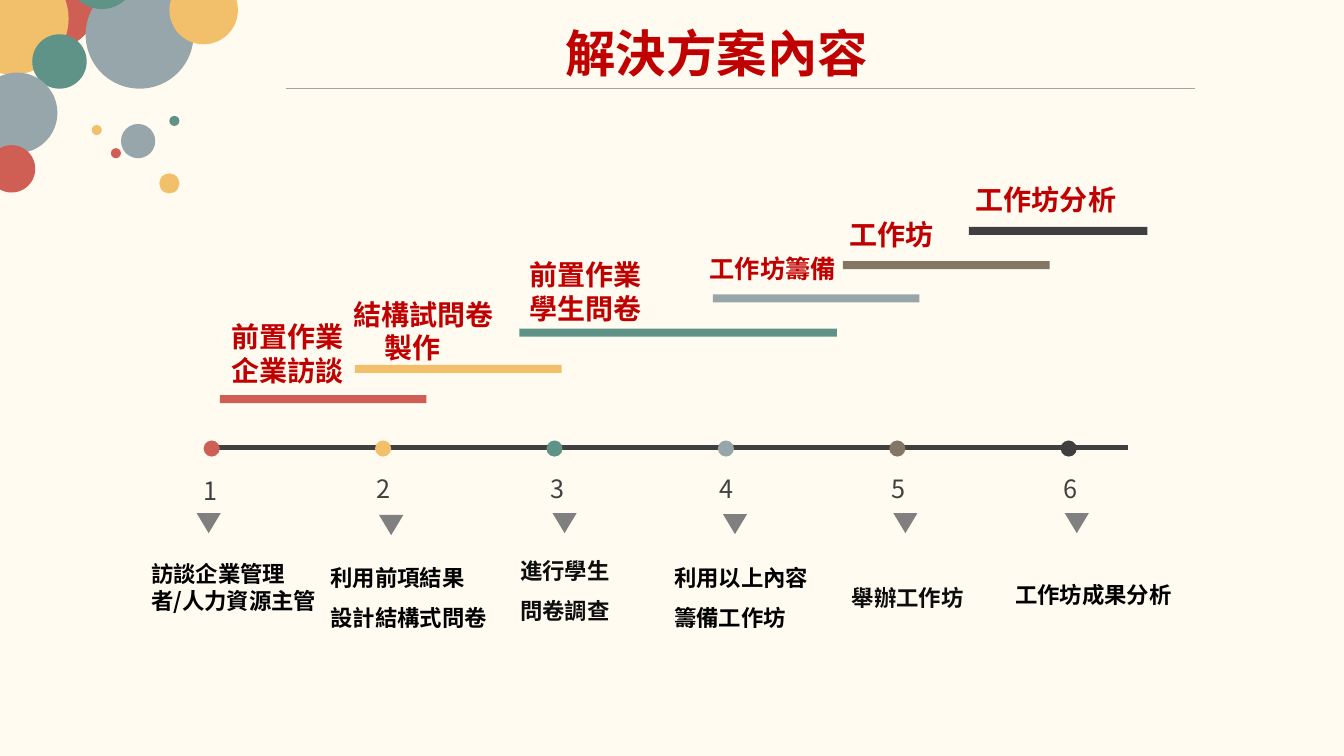
from lxml import etree
from pptx import Presentation
from pptx import util as u
from pptx.dml.color import RGBColor
from pptx.enum import shapes, text
from pptx.oxml.ns import qn

CREAM = RGBColor(0xFF, 0xFB, 0xF0)
RED = RGBColor(0xCF, 0x5F, 0x55)
GOLD = RGBColor(0xF2, 0xC0, 0x6B)
GREEN = RGBColor(0x5F, 0x93, 0x87)
STEEL = RGBColor(0x97, 0xA6, 0xAB)
BROWN = RGBColor(0x83, 0x76, 0x64)
DARK = RGBColor(0x3F, 0x3F, 0x3F)
CRIMSON = RGBColor(0xC0, 0x00, 0x00)
BLACK = RGBColor(0x00, 0x00, 0x00)
INK = RGBColor(0x0D, 0x0D, 0x0D)
SLATE = RGBColor(0x40, 0x40, 0x40)
GREY = RGBColor(0x80, 0x80, 0x80)
PALE = RGBColor(0xA6, 0xA6, 0xA6)

KIND = shapes.MSO_SHAPE
LEFT, CENTER = text.PP_ALIGN.LEFT, text.PP_ALIGN.CENTER


class Board:
    """Holds the type style and the slide being drawn."""

    font = "Noto Sans CJK SC"

    def __init__(self, slide):
        self.slide = slide
        fill = slide.background.fill
        fill.solid()
        fill.fore_color.rgb = CREAM

    def shape(self, kind, x, y, w, h, color, group=None):
        home = (group or self.slide).shapes
        item = home.add_shape(kind, *map(u.Inches, (x, y, w, h)))
        item.shadow.inherit = False
        item.fill.solid()
        item.fill.fore_color.rgb = color
        item.line.fill.background()
        return item

    def arrow(self, x, y):
        item = self.shape(KIND.ISOSCELES_TRIANGLE, x, y, 0.24, 0.2, GREY)
        item._element.spPr.find(qn("a:xfrm")).set("flipV", "1")

    def line(self, x1, x2, y, color, width):
        item = self.slide.shapes.add_connector(
            shapes.MSO_CONNECTOR.STRAIGHT, *map(u.Inches, (x1, y, x2, y)))
        item.line.color.rgb = color
        item.line.width = u.Pt(width)
        etree.SubElement(item._element.spPr, qn("a:effectLst"))

    def label(self, words, x, y, w, h, size, color, bold=True,
              align=LEFT, space=None, indents=()):
        box = self.slide.shapes.add_textbox(*map(u.Inches, (x, y, w, h)))
        frame = box.text_frame
        frame.word_wrap = True
        frame.auto_size = text.MSO_AUTO_SIZE.SHAPE_TO_FIT_TEXT
        frame.text = words
        for para in frame.paragraphs:
            para.alignment = align
            if space:
                para.line_spacing = space
            font = para.font
            font.size, font.bold = u.Pt(size), bold
            font.color.rgb = color
            font.name = self.font
            props = para._p.pPr
            etree.SubElement(props.find(qn("a:defRPr")), qn("a:ea"),
                             typeface=self.font)
        for para, gap in zip(frame.paragraphs, indents):
            para._p.pPr.set("marL", str(u.Inches(gap)))


def main():
    deck = Presentation()
    deck.slide_width, deck.slide_height = u.Inches(13.33), u.Inches(7.5)
    board = Board(deck.slides.add_slide(deck.slide_layouts[6]))

    # Phase bars: left, top, width, colour
    bars = [
        (2.18, 3.92, 2.05, RED),
        (3.52, 3.62, 2.05, GOLD),
        (5.15, 3.26, 3.15, GREEN),
        (7.07, 2.92, 2.05, STEEL),
        (8.36, 2.59, 2.05, BROWN),
        (9.61, 2.25, 1.77, DARK),
    ]
    for x, y, w, color in bars:
        board.shape(KIND.RECTANGLE, x, y, w, 0.08, color)

    # Timeline with its evenly spaced dots
    board.line(2.14, 11.19, 4.44, SLATE, 3)
    for i, bar in enumerate(bars):
        board.shape(KIND.OVAL, 2.02 + 1.7 * i, 4.37, 0.16, 0.16, bar[-1])

    # Step numbers and the arrows below them
    board.label("1", 1.91, 4.67, 0.35, 0.4, 18, SLATE, False, CENTER)
    for num, x in enumerate((3.42, 5.14, 6.82, 8.52, 10.23), 2):
        board.label(str(num), x, 4.65, 0.65, 0.4, 18, SLATE, False,
                    indents=[0.22])
    for x, y in ((1.95, 5.09), (3.76, 5.11), (5.48, 5.09),
                 (7.17, 5.1), (8.86, 5.09), (10.56, 5.09)):
        board.arrow(x, y)

    # Step details
    board.label("訪談企業管理者/人力資源主管", 1.4, 5.51, 1.92, 0.64, 16, BLACK)
    for words, x, y, w, h, color in (
        ("利用前項結果\n設計結構式問卷", 3.18, 5.41, 1.79, 0.91, BLACK),
        ("進行學生\n問卷調查", 5.06, 5.34, 1.37, 0.86, INK),
        ("利用以上內容\n籌備工作坊", 6.59, 5.41, 1.57, 0.91, BLACK),
        ("舉辦工作坊", 8.35, 5.61, 1.44, 0.5, INK),
        ("工作坊成果分析", 9.97, 5.58, 2.26, 0.5, BLACK),
    ):
        board.label(words, x, y, w, h, 16, color, space=1.5)

    # Corner bubbles: left, top, size, colour
    group = board.slide.shapes.add_group_shape()
    for x, y, size, color in (
        (0.04, -0.44, 0.93, RED),
        (-0.43, -0.37, 1.11, GOLD),
        (0.32, 0.34, 0.54, GREEN),
        (-0.23, 0.72, 0.8, STEEL),
        (0.85, -0.19, 1.07, STEEL),
        (0.67, -0.59, 0.68, GREEN),
        (-0.12, 1.44, 0.47, RED),
        (1.2, 1.23, 0.34, STEEL),
        (1.1, 1.47, 0.1, RED),
        (0.91, 1.24, 0.1, GOLD),
        (1.68, 1.15, 0.1, GREEN),
        (1.58, 1.72, 0.2, GOLD),
        (1.68, -0.24, 0.68, GOLD),
    ):
        board.shape(KIND.OVAL, x, y, size, size, color, group)

    # Title and rule
    board.line(2.84, 11.85, 0.88, PALE, 0.5)
    board.label("解決方案內容", 2.73, 0.17, 8.76, 0.71, 36, CRIMSON,
                align=CENTER)

    # Phase names above the bars
    for words, x, y, w, h, size, indents in (
        ("前置作業\n企業訪談", 2.2, 3.12, 1.55, 0.77, 20, ()),
        ("結構試問卷\n製作", 3.41, 2.9, 3.58, 0.77, 20, (0, 0.31)),
        ("前置作業\n學生問卷", 5.15, 2.51, 3.58, 0.77, 20, ()),
        ("工作坊籌備", 6.94, 2.46, 3.58, 0.4, 18, ()),
        ("工作坊", 8.33, 2.11, 3.58, 0.44, 20, ()),
        ("工作坊分析", 9.58, 1.76, 3.58, 0.44, 20, ()),
    ):
        board.label(words, x, y, w, h, size, CRIMSON, indents=indents)

    deck.save("out.pptx")


if __name__ == "__main__":
    main()
